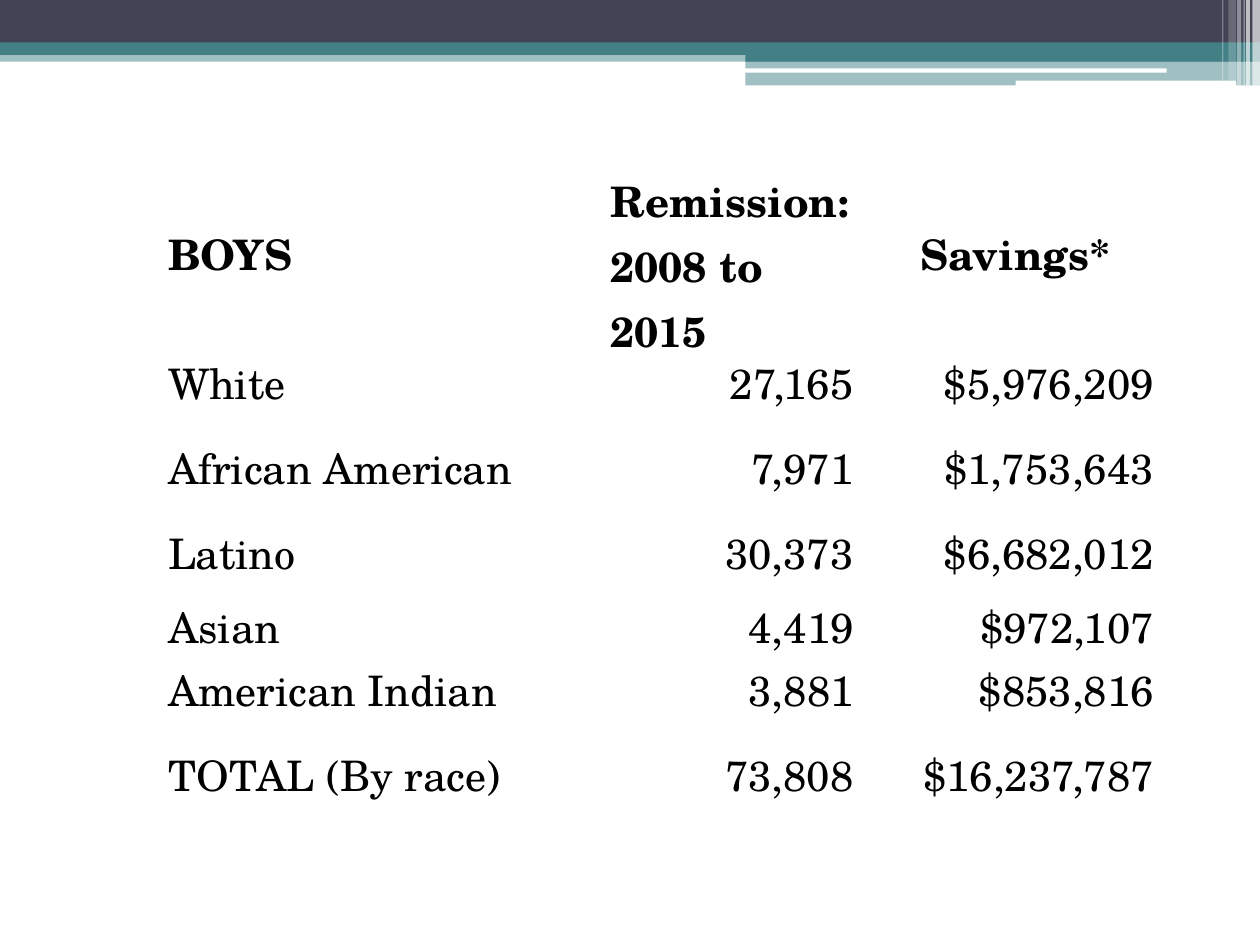
import pptx
import pptx.util
import pptx.dml.color
import pptx.enum.shapes
import pptx.enum.text
import pptx.oxml.ns
from lxml import etree

Pt = pptx.util.Pt
RGB = pptx.dml.color.RGBColor
KIND = pptx.enum.shapes.MSO_SHAPE
ALIGN = pptx.enum.text.PP_ALIGN
ANCHOR = pptx.enum.text.MSO_ANCHOR
qn = pptx.oxml.ns.qn

NAVY = RGB(0x42, 0x44, 0x56)
TEAL = RGB(0x43, 0x80, 0x86)
WHITE = RGB(255, 255, 255)
BLACK = RGB(0, 0, 0)
PLAIN = "{2D5ABB26-0587-4C30-8999-92F81FD0307C}"

# Left, top, width, height, colour, opacity in percent
BANDS = [
    (0, 28.8, 720, 6.5, TEAL, 50),
    (0, 0, 720, 24.5, NAVY, 100),
    (0, 24.2, 720, 7.2, TEAL, 100),
    (426, 28, 294, 7.2, TEAL, 100),
    (426, 34.6, 294, 14.2, TEAL, 50),
]
PILLS = [(425.5, 39.1, 241.2, 2.4), (580.3, 46.1, 126, 3.1)]
# Left, width, height, opacity in percent
STRIPES = [
    (715.7, 4.3, 49, 65), (712.1, 2.2, 49, 65), (710.6, 0.7, 49, 60),
    (707, 2.2, 49, 40), (702, 4.3, 46.1, 20), (698.4, 0.7, 46.1, 30),
]

HEADS = ["BOYS", "Remission: 2008 to 2015", "Savings*"]
ROWS = [
    ("White", "27,165", "$5,976,209"),
    ("African American", "7,971", "$1,753,643"),
    ("Latino", "30,373", "$6,682,012"),
    ("Asian", "4,419", "$972,107"),
    ("American Indian", "3,881", "$853,816"),
    ("TOTAL (By race)", "73,808", "$16,237,787"),
]
WIDTHS = [252.9, 145.6, 171.5]
TALL, SHORT = 48.6, 36
HEIGHTS = [111.4, TALL, TALL, 42.3, SHORT, TALL, SHORT, 27.5]
LEAD = 29  # line height of the body rows
LIFT = 13.7  # raises the one-line headers


def style(item, form):
    for name, value in form.items():
        setattr(item, name, value)


def block(slide, box, color, alpha=100, kind=KIND.RECTANGLE):
    shape = slide.shapes.add_shape(kind, *map(Pt, box))
    shape.shadow.inherit = False
    shape.line.fill.background()
    shape.fill.solid()
    shape.fill.fore_color.rgb = color
    if alpha < 100:
        tone = shape.fill._xPr.find(".//" + qn("a:srgbClr"))
        etree.SubElement(tone, qn("a:alpha"), val=str(alpha * 1000))


def banner(slide, left, top):
    # Colour bands
    for x, y, wide, high, color, alpha in BANDS:
        block(slide, (left + x, top + y, wide, high), color, alpha)
    # White cut-outs
    for x, y, wide, high in PILLS:
        block(slide, (left + x, top + y, wide, high), WHITE,
              kind=KIND.ROUNDED_RECTANGLE)
    # Pale stripes at the right edge
    for x, wide, high, alpha in STRIPES:
        block(slide, (left + x, top, wide, high), WHITE, alpha)


def write(cell, text, align, bold=False):
    para = cell.text_frame.paragraphs[0]
    para.alignment = align
    if not bold:
        para.line_spacing = Pt(LEAD)
    run = para.add_run()
    run.text = text
    style(run.font, {"name": "TeX Gyre Schola", "size": Pt(24), "bold": bold})
    run.font.color.rgb = BLACK


def savings(slide, left, top):
    size = (left, top, sum(WIDTHS), sum(HEIGHTS))
    grid = slide.shapes.add_table(
        len(HEIGHTS), len(WIDTHS), *map(Pt, size)).table
    grid._tbl.tblPr.find(qn("a:tableStyleId")).text = PLAIN
    style(grid, {"first_row": False, "horz_banding": False})
    for col, wide in zip(grid.columns, WIDTHS):
        col.width = Pt(wide)
    for row, high in zip(grid.rows, HEIGHTS):
        row.height = Pt(high)
    for cell in grid.iter_cells():
        style(cell, {"margin_left": 0, "margin_right": 0, "margin_top": 0,
                     "margin_bottom": 0, "vertical_anchor": ANCHOR.TOP})
        cell.fill.background()

    # Header
    for c, text in enumerate(HEADS):
        cell = grid.cell(0, c)
        style(cell, {"vertical_anchor": ANCHOR.MIDDLE,
                     "margin_bottom": 0 if c == 1 else Pt(LIFT)})
        write(cell, text, ALIGN.CENTER if c == 2 else ALIGN.LEFT, True)
    # Counts and amounts, each padded by one space
    for r, (race, *sums) in enumerate(ROWS, 1):
        write(grid.cell(r, 0), race, ALIGN.LEFT)
        for c, text in enumerate(sums, 1):
            write(grid.cell(r, c), f" {text} ", ALIGN.RIGHT)


def main():
    deck = pptx.Presentation()
    style(deck, {"slide_width": Pt(720), "slide_height": Pt(540)})
    slide = deck.slides.add_slide(deck.slide_layouts[6])
    banner(slide, 0, 0)
    savings(slide, 96, 96)
    deck.save("out.pptx")


if __name__ == "__main__":
    main()
